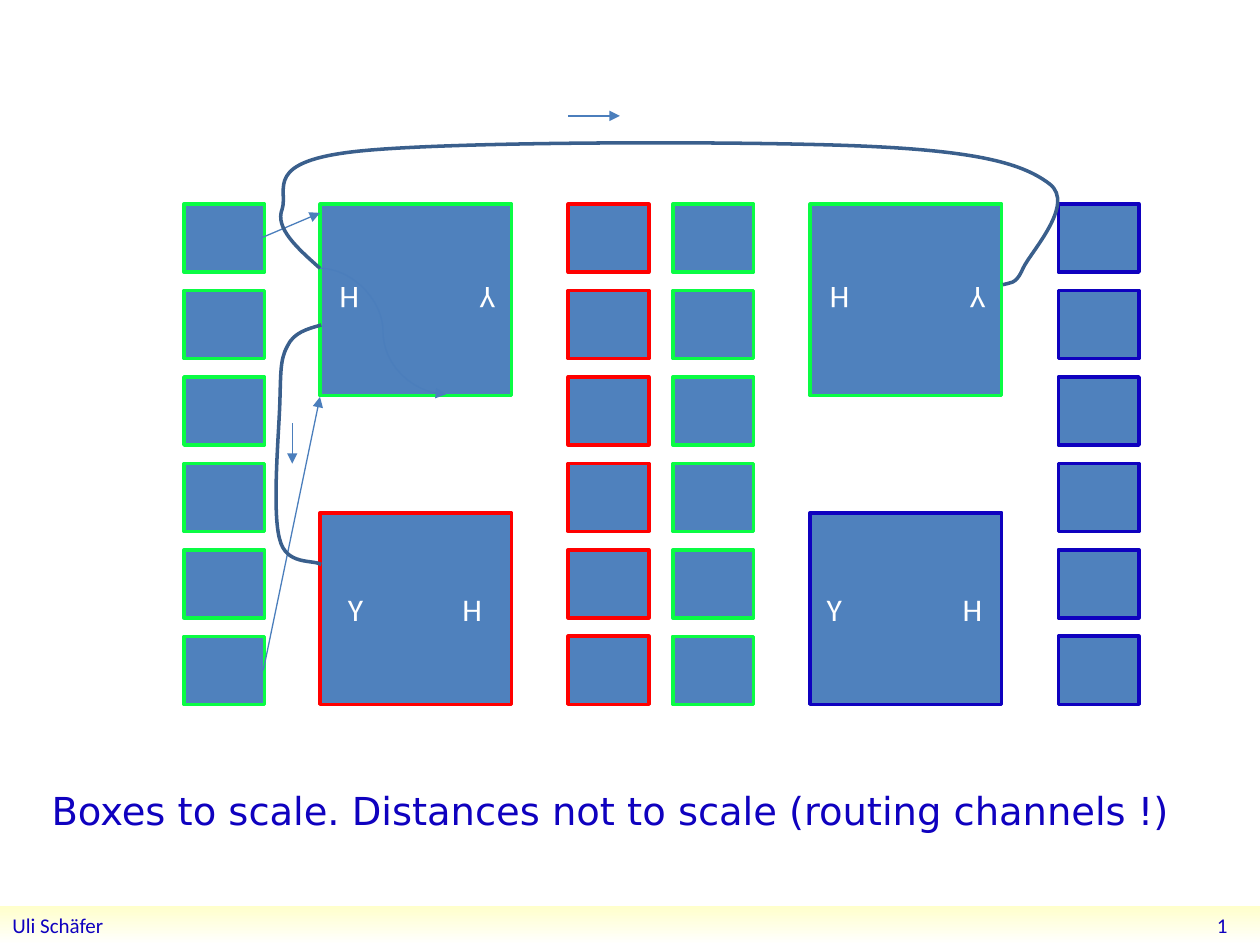
from lxml import etree
from pptx import Presentation
from pptx.dml.color import RGBColor
from pptx.enum import shapes, text
from pptx.oxml.ns import qn
from pptx.util import Inches, Pt

BLUE = RGBColor(0x0F, 0x01, 0xBF)
RED = RGBColor(0xFF, 0x00, 0x00)
GREEN = RGBColor(0x0A, 0xFC, 0x44)
BOX = RGBColor(0x4F, 0x81, 0xBD)
ARROW = RGBColor(0x4B, 0x7E, 0xBC)
CURVE = RGBColor(0x3A, 0x5F, 0x8C)
CREAM = RGBColor(0xFF, 0xFF, 0xCB)
WHITE = RGBColor(0xFF, 0xFF, 0xFF)


def add_box(grp, x, y, w, h, color, rot):
    sp = grp.shapes.add_shape(shapes.MSO_SHAPE.RECTANGLE, Inches(x), Inches(y), Inches(w), Inches(h))
    sp.shadow.inherit = False
    sp.rotation = rot
    sp.fill.solid()
    sp.fill.fore_color.rgb = BOX
    sp.line.color.rgb = color
    sp.line.width = Pt(2)
    return sp


def write(sp, words, size, font, color, align):
    tf = sp.text_frame
    tf.word_wrap = True
    p = tf.paragraphs[0]
    p.text = words
    p.alignment = align
    r = p.runs[0]
    r.font.size = Pt(size)
    r.font.name = font
    r.font.color.rgb = color
    return p


prs = Presentation()
prs.slide_width = Inches(10)
prs.slide_height = Inches(7.5)
s = prs.slides.add_slide(prs.slide_layouts[1])
title = s.shapes.title.element
title.getparent().remove(title)

footer = s.shapes.add_shape(shapes.MSO_SHAPE.RECTANGLE, Inches(0), Inches(7.19), Inches(10), Inches(0.31))
footer.shadow.inherit = False
footer.line.fill.background()
footer.fill.gradient()
footer.fill.gradient_angle = 270
for stop, color in zip(footer.fill.gradient_stops, (CREAM, WHITE)):
    stop.color.rgb = color
write(footer, "Uli Schäfer", 12, "Calibri", BLUE, text.PP_ALIGN.LEFT)

number = s.shapes.add_textbox(Inches(7.73), Inches(7.18), Inches(2.11), Inches(0.32))
number.text_frame.vertical_anchor = text.MSO_ANCHOR.MIDDLE
write(number, "1", 12, "Calibri", BLUE, text.PP_ALIGN.RIGHT)

modules = [
    (2.54, 4.07, 4.51, RED, 0, 0.22, 0.91),
    (2.54, 1.62, 1.46, GREEN, 180, 0.13, 1.08),
    (6.43, 4.07, 8.4, BLUE, 0, 0.13, 1.08),
    (6.43, 1.62, 5.34, GREEN, 180, 0.13, 1.08),
]
for x, y, column, color, rot, inset, tab in modules:
    grp = s.shapes.add_group_shape()
    sp = add_box(grp, x, y, 1.52, 1.52, color, rot)
    sp.text_frame.margin_left = Inches(inset)
    sp.text_frame.margin_right = 0
    p = write(sp, "Y\tH", 18, "Calibri", WHITE, text.PP_ALIGN.LEFT)
    tabs = etree.SubElement(p._p.get_or_add_pPr(), qn("a:tabLst"))
    etree.SubElement(tabs, qn("a:tab"), pos=str(Inches(tab)), algn="l")
    for row in range(6):
        add_box(grp, column, 1.62 + 0.686 * row, 0.64, 0.54, color, rot)

body = s.placeholders[1]
body.left, body.top, body.width, body.height = Inches(0.31), Inches(6.2), Inches(9.53), Inches(0.69)
p = body.text_frame.paragraphs[0]
pPr = p._p.get_or_add_pPr()
pPr.set("marL", "0")
pPr.set("indent", "0")
etree.SubElement(pPr, qn("a:buNone"))
write(body, "Boxes to scale. Distances not to scale (routing channels !)", 22, "DejaVu Sans", BLUE, text.PP_ALIGN.LEFT)
p.space_before = Pt(0)

STRAIGHT, CURVED = shapes.MSO_CONNECTOR.STRAIGHT, shapes.MSO_CONNECTOR.CURVE
arrows = [
    (STRAIGHT, 2.07, 1.89, 2.54, 1.69),
    (STRAIGHT, 2.09, 5.32, 2.54, 3.15),
    (CURVED, 2.54, 2.13, 3.54, 3.13),
    (STRAIGHT, 4.51, 0.92, 4.92, 0.92),
    (STRAIGHT, 2.32, 3.36, 2.32, 3.68),
]
for kind, *ends in arrows:
    arrow = s.shapes.add_connector(kind, *[Inches(v) for v in ends])
    arrow.line.color.rgb = ARROW
    arrow.line.width = Pt(0.75)
    etree.SubElement(arrow.line._get_or_add_ln(), qn("a:tailEnd"), type="triangle")
    etree.SubElement(arrow._element.spPr, qn("a:effectLst"))

long_route = [
    (2.54, 2.13), (2.36, 1.97), (2.18, 1.81), (2.24, 1.66), (2.29, 1.5), (2.08, 1.28), (2.85, 1.2),
    (3.62, 1.12), (5.94, 1.12), (6.85, 1.16), (7.77, 1.2), (8.12, 1.3), (8.33, 1.46),
    (8.54, 1.62), (8.18, 2), (8.12, 2.13), (8.06, 2.27), (8.01, 2.24), (7.96, 2.26),
]
short_route = [
    (2.55, 2.58), (2.44, 2.61), (2.33, 2.64), (2.28, 2.75), (2.22, 2.86), (2.23, 2.97), (2.22, 3.23),
    (2.21, 3.48), (2.16, 4.07), (2.22, 4.28), (2.27, 4.49), (2.48, 4.44), (2.55, 4.48),
]
routes = [(long_route, 2.23, 1.13, 6.17, 1.13), (short_route, 2.19, 2.58, 0.36, 1.9)]
for route, x, y, w, h in routes:
    points = [(Inches(px), Inches(py)) for px, py in route]
    fb = s.shapes.build_freeform(*points[0])
    fb.add_line_segments(points[1:], close=False)
    sp = fb.convert_to_shape()
    sp.left, sp.top, sp.width, sp.height = Inches(x), Inches(y), Inches(w), Inches(h)
    outline = sp._element.spPr.find(".//" + qn("a:path"))
    outline.set("w", str(sp.width))
    outline.set("h", str(sp.height))
    for segment in list(outline):
        outline.remove(segment)
    for i, (px, py) in enumerate(points):
        if i == 0:
            segment = etree.SubElement(outline, qn("a:moveTo"))
        elif i % 3 == 1:
            segment = etree.SubElement(outline, qn("a:cubicBezTo"))
        etree.SubElement(segment, qn("a:pt"), x=str(px - sp.left), y=str(py - sp.top))
    sp.shadow.inherit = False
    sp.fill.background()
    sp.line.color.rgb = CURVE
    sp.line.width = Pt(2)

prs.save("out.pptx")
